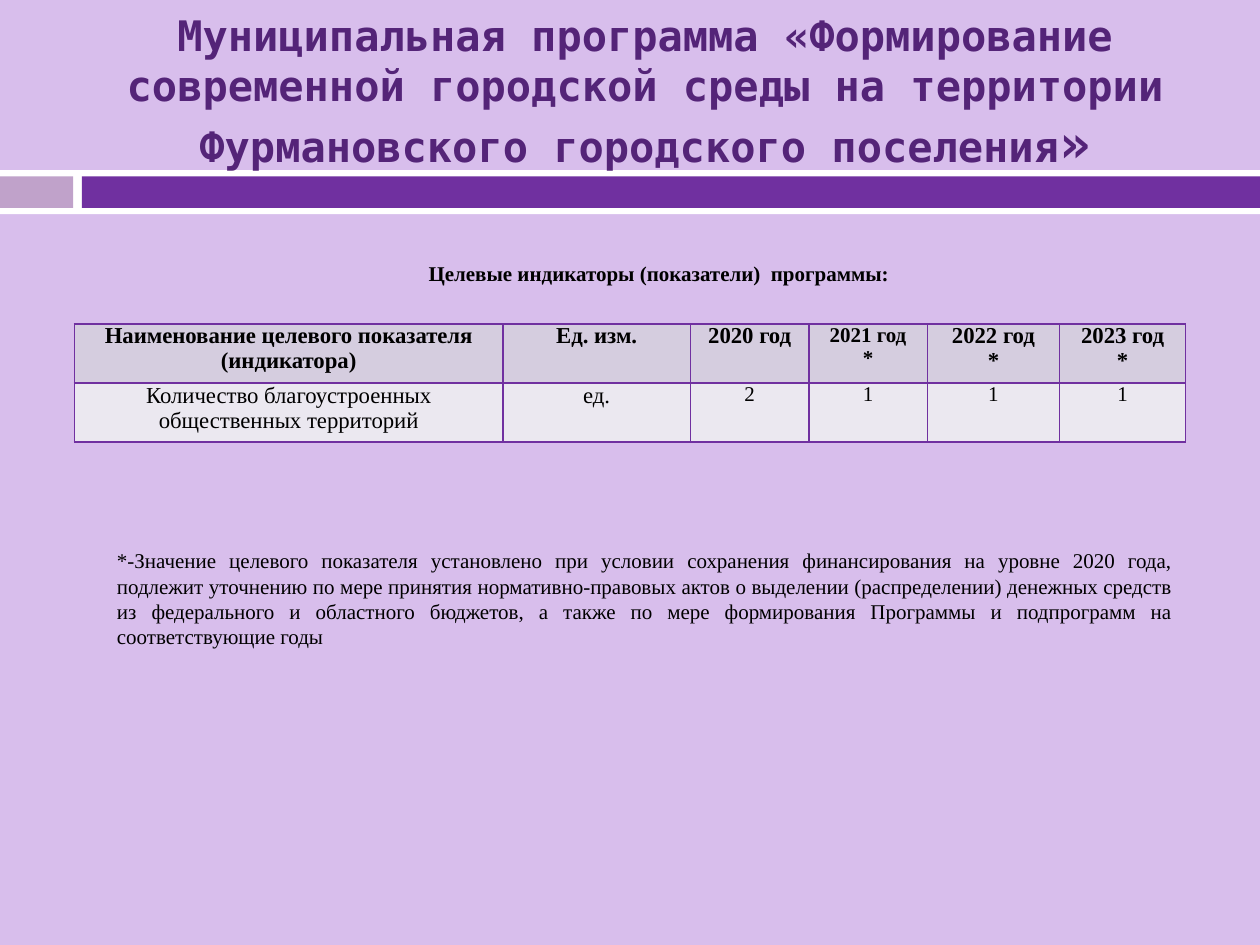
from typing import NamedTuple

from lxml import etree
from pptx import Presentation
from pptx.dml.color import RGBColor
from pptx.enum import shapes, text
from pptx.oxml import ns
from pptx.util import Inches, Pt

COLORS = {
    "background": "D8BEEC",
    "white": "FFFFFF",
    "accent": "C0A2CA",
    "purple": "7030A0",
    "title": "542478",
    "black": "000000",
    "header": "D5CDDF",
    "body": "EBE8F0",
}
SERIF = "Times New Roman"
MONO = "DejaVu Sans Mono"
ALIGN = text.PP_ALIGN
ANCHOR = text.MSO_ANCHOR


class Box(NamedTuple):
    left: float
    top: float
    width: float
    height: float

    def lengths(self) -> list:
        return [Inches(value) for value in self]


class Bar(NamedTuple):
    box: Box
    color: str


class Style(NamedTuple):
    size: float
    bold: bool = False
    font: str = SERIF
    color: str = "black"
    align: ALIGN = ALIGN.CENTER


class Label(NamedTuple):
    box: Box
    content: str
    style: Style
    anchor: ANCHOR = ANCHOR.TOP


class Cell(NamedTuple):
    content: str
    size: float = 13


BARS = [
    Bar(Box(0, 1.35, 10, 0.35), "white"),
    Bar(Box(0, 1.4, 0.58, 0.25), "accent"),
    Bar(Box(0.65, 1.4, 9.35, 0.25), "purple"),
]
TITLE = Label(
    Box(0.24, 0.29, 9.76, 0.87),
    "Муниципальная программа «Формирование современной городской среды "
    "на территории Фурмановского городского поселения",
    Style(24, True, MONO, "title"),
    ANCHOR.MIDDLE,
)
SUBTITLE = Label(
    Box(0.59, 2.02, 9.28, 0.58),
    "Целевые индикаторы (показатели)  программы:",
    Style(12, True),
)
NOTE = Label(
    Box(0.83, 4.3, 8.58, 0.91),
    "*-Значение целевого показателя установлено при условии сохранения "
    "финансирования на уровне 2020 года, подлежит уточнению по мере принятия "
    "нормативно-правовых актов о выделении (распределении) денежных средств "
    "из федерального и областного бюджетов, а также по мере формирования "
    "Программы и подпрограмм на соответствующие годы",
    Style(12, align=ALIGN.JUSTIFY),
)
TABLE_BOX = Box(0.59, 2.57, 8.82, 0.94)
COLUMN_WIDTHS = [3.4, 1.49, 0.94, 0.94, 1.05, 1]
ROWS = [
    [
        Cell("Наименование целевого показателя (индикатора)"),
        Cell("Ед. изм."),
        Cell("2020 год"),
        Cell("2021 год\n*", 12),
        Cell("2022 год\n*"),
        Cell("2023 год\n*"),
    ],
    [
        Cell("Количество благоустроенных общественных территорий"),
        Cell("ед."),
        *[Cell(value, 12) for value in "2111"],
    ],
]


def rgb(name: str) -> RGBColor:
    return RGBColor.from_string(COLORS[name])


def format_run(r, style: Style) -> None:
    r.font.size = Pt(style.size)
    r.font.bold = style.bold
    r.font.name = style.font
    r.font.color.rgb = rgb(style.color)


def write(tf, content: str, style: Style) -> None:
    tf.text = content
    tf.word_wrap = True
    for p in tf.paragraphs:
        p.alignment = style.align
        for r in p.runs:
            format_run(r, style)


def draw_bar(slide, bar: Bar) -> None:
    sp = slide.shapes.add_shape(shapes.MSO_SHAPE.RECTANGLE, *bar.box.lengths())
    sp.shadow.inherit = False
    sp.fill.solid()
    sp.fill.fore_color.rgb = rgb(bar.color)
    sp.line.fill.background()


def draw_label(slide, label: Label):
    tf = slide.shapes.add_textbox(*label.box.lengths()).text_frame
    write(tf, label.content, label.style)
    tf.vertical_anchor = label.anchor
    return tf


def draw_title(slide, label: Label) -> None:
    tf = draw_label(slide, label)
    r = tf.paragraphs[0].add_run()
    r.text = "»"
    format_run(r, label.style._replace(size=30))


def add_borders(cell, color: str) -> None:
    tc_pr = cell._tc.get_or_add_tcPr()
    for side in ("lnL", "lnR", "lnT", "lnB"):
        ln = etree.SubElement(tc_pr, ns.qn(f"a:{side}"), w=str(Pt(1)))
        fill = etree.SubElement(ln, ns.qn("a:solidFill"))
        etree.SubElement(fill, ns.qn("a:srgbClr"), val=COLORS[color])


def draw_table(slide) -> None:
    frame = slide.shapes.add_table(
        len(ROWS), len(COLUMN_WIDTHS), *TABLE_BOX.lengths()
    )
    table = frame.table
    for column, width in zip(table.columns, COLUMN_WIDTHS):
        column.width = Inches(width)
    for i, row in enumerate(ROWS):
        for j, item in enumerate(row):
            cell = table.cell(i, j)
            cell.margin_left = cell.margin_right = Inches(0.07)
            cell.margin_top = cell.margin_bottom = 0
            write(cell.text_frame, item.content, Style(item.size, bold=i == 0))
            add_borders(cell, "purple")
            cell.fill.solid()
            cell.fill.fore_color.rgb = rgb("body" if i else "header")


def main() -> None:
    prs = Presentation()
    prs.slide_width = Inches(10)
    prs.slide_height = Inches(7.5)
    s = prs.slides.add_slide(prs.slide_layouts[6])
    s.background.fill.solid()
    s.background.fill.fore_color.rgb = rgb("background")
    for bar in BARS:
        draw_bar(s, bar)
    draw_title(s, TITLE)
    draw_label(s, SUBTITLE)
    draw_table(s)
    draw_label(s, NOTE)
    prs.save("out.pptx")


if __name__ == "__main__":
    main()
